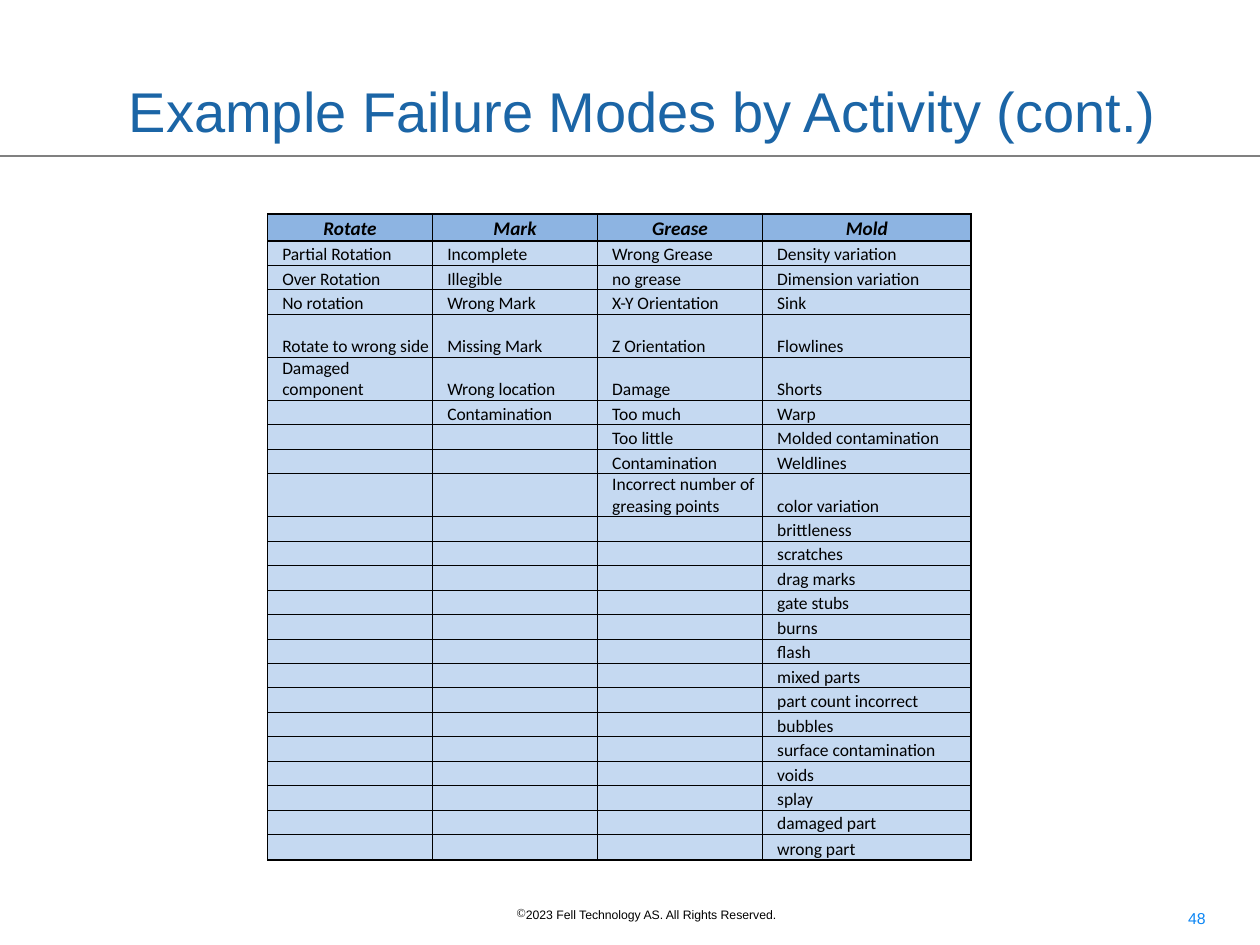
from itertools import zip_longest

from lxml.etree import SubElement
from pptx import Presentation
from pptx.dml.color import RGBColor
from pptx.enum.shapes import MSO_CONNECTOR as Connector
from pptx.enum.text import MSO_ANCHOR as Anchor, MSO_AUTO_SIZE as AutoSize, PP_ALIGN as Align
from pptx.oxml.ns import qn
from pptx.util import Pt

PAGE_WIDTH, PAGE_HEIGHT = 720, 540
BLACK, GRAY, TITLE_BLUE, NUMBER_BLUE = "000000", "808080", "1B65A6", "0C86F4"
HEADER_FILL, BODY_FILL = "8DB4E2", "C5D9F1"
HEADER_HEIGHT, ROW_HEIGHT, TALL_HEIGHT, LAST_HEIGHT = 15.4, 14, 24.6, 14.4
TALL_ROWS = (4, 5, 9)
COLUMN_WIDTHS = (94.3, 94.3, 94.3, 119.2)

FAILURE_MODES = {
    "Rotate": ["Partial Rotation", "Over Rotation", "No rotation",
               "Rotate to wrong side", "Damaged component"],
    "Mark": ["Incomplete", "Illegible", "Wrong Mark", "Missing Mark",
             "Wrong location", "Contamination"],
    "Grease": ["Wrong Grease", "no grease", "X-Y Orientation", "Z Orientation",
               "Damage", "Too much", "Too little", "Contamination",
               "Incorrect number of greasing points"],
    "Mold": ["Density variation", "Dimension variation", "Sink", "Flowlines",
             "Shorts", "Warp", "Molded contamination", "Weldlines",
             "color variation", "brittleness", "scratches", "drag marks",
             "gate stubs", "burns", "flash", "mixed parts",
             "part count incorrect", "bubbles", "surface contamination",
             "voids", "splay", "damaged part", "wrong part"],
}


def color(hex_code):
    return RGBColor.from_string(hex_code)


def style_runs(para, size, hex_code, name="Arial", emphasis=False):
    for span in para.runs:
        font = span.font
        font.name, font.size = name, Pt(size)
        font.bold = font.italic = emphasis
        font.color.rgb = color(hex_code)


def add_text(page, box, text, size, hex_code, align=Align.LEFT, anchor=Anchor.TOP):
    frame = page.shapes.add_textbox(*map(Pt, box)).text_frame
    frame.word_wrap = True
    frame.vertical_anchor = anchor
    frame.text = text
    para = frame.paragraphs[0]
    para.alignment = align
    style_runs(para, size, hex_code)
    return frame


def add_title(page, box):
    frame = add_text(page, box, "Example Failure Modes by Activity (cont.)",
                     32, TITLE_BLUE, anchor=Anchor.BOTTOM)
    frame.paragraphs[0].line_spacing = 0.9


def add_rule(page, left, top, width):
    rule = page.shapes.add_connector(
        Connector.STRAIGHT, Pt(left), Pt(top), Pt(left + width), Pt(top))
    rule.line.color.rgb = color(GRAY)
    rule.line.width = Pt(1.5)
    SubElement(rule._element.spPr, qn("a:effectLst"))


def add_copyright(page, box):
    """Place the copyright line, whose sign is the paragraph's bullet."""
    frame = add_text(page, box, "2023 Fell Technology AS. All Rights Reserved.", 7, BLACK)
    frame.word_wrap = False
    frame.auto_size = AutoSize.SHAPE_TO_FIT_TEXT
    properties = frame.paragraphs[0]._p.get_or_add_pPr()
    properties.set("marL", "0")
    properties.set("indent", "0")
    SubElement(properties, qn("a:buChar"), char="©")


def set_borders(cell, widths):
    """Draw the borders; widths are left, right, top and bottom."""
    properties = cell._tc.get_or_add_tcPr()
    for side, width in zip("LRTB", widths):
        line = SubElement(properties, qn(f"a:ln{side}"), w=str(Pt(width)))
        fill = SubElement(line, qn("a:solidFill"))
        SubElement(fill, qn("a:srgbClr"), val=BLACK)


def fill_cell(cell, text, is_header):
    cell.fill.solid()
    cell.fill.fore_color.rgb = color(HEADER_FILL if is_header else BODY_FILL)
    cell.vertical_anchor = Anchor.BOTTOM
    cell.margin_left = Pt(0 if is_header else 8.4)
    cell.margin_right = cell.margin_top = cell.margin_bottom = 0
    if not text:
        SubElement(cell.text_frame.paragraphs[0]._p, qn("a:endParaRPr"), sz="1000")
        return
    cell.text_frame.text = text
    para = cell.text_frame.paragraphs[0]
    para.alignment = Align.CENTER if is_header else Align.LEFT
    style_runs(para, 11 if is_header else 10, BLACK, "Calibri", is_header)


def add_failure_table(page, left, top):
    rows = [tuple(FAILURE_MODES), *zip_longest(*FAILURE_MODES.values(), fillvalue="")]
    last_row, last_column = len(rows) - 1, len(COLUMN_WIDTHS) - 1
    heights = [TALL_HEIGHT if index in TALL_ROWS else ROW_HEIGHT for index in range(len(rows))]
    heights[0], heights[-1] = HEADER_HEIGHT, LAST_HEIGHT
    table = page.shapes.add_table(
        len(rows), len(COLUMN_WIDTHS), Pt(left), Pt(top),
        Pt(sum(COLUMN_WIDTHS)), Pt(sum(heights))).table
    table.first_row = table.horz_banding = False
    for column, width in zip(table.columns, COLUMN_WIDTHS):
        column.width = Pt(width)
    for row_index, texts in enumerate(rows):
        table.rows[row_index].height = Pt(heights[row_index])
        for column_index, text in enumerate(texts):
            cell = table.cell(row_index, column_index)
            set_borders(cell, (
                0.5,
                1 if column_index == last_column else 0.5,
                1 if row_index <= 1 else 0.5,
                1 if row_index in (0, last_row) else 0.5))
            fill_cell(cell, text, row_index == 0)


def main():
    deck = Presentation()
    deck.slide_width, deck.slide_height = Pt(PAGE_WIDTH), Pt(PAGE_HEIGHT)
    page = deck.slides.add_slide(deck.slide_layouts[6])
    add_rule(page, 0, 89.2, PAGE_WIDTH)
    add_text(page, (528, 516, 168, 22), "48", 9, NUMBER_BLUE, Align.RIGHT)
    add_copyright(page, (288, 514.8, 166, 16))
    add_title(page, (66.5, 0, 624, 86.4))
    add_failure_table(page, 152.9, 122.3)
    deck.save("out.pptx")


if __name__ == "__main__":
    main()
